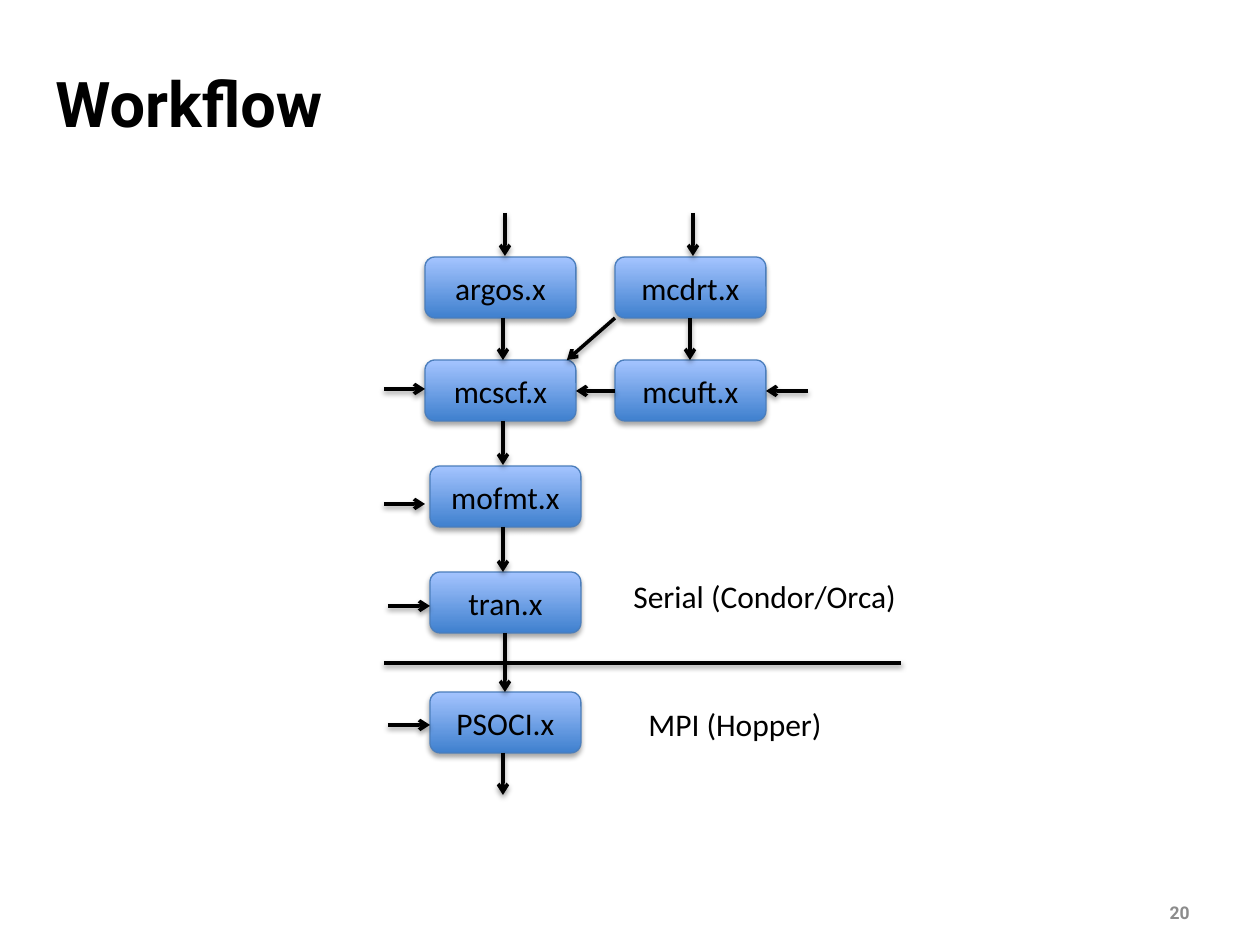
from typing import NamedTuple

import pptx
import pptx.dml.color
import pptx.enum.shapes
import pptx.enum.text
import pptx.oxml.ns
import pptx.util
from lxml import etree

PX = 914400 // 126
COLORS = {
    "text": "000000",
    "page": "8C8C8C",
    "box_bottom": "3F80CE",
    "box_top": "A4C4FF",
    "box_edge": "4B7EBC",
    "flow": "000000",
    "shadow": "000000",
}
BOX_W, BOX_H = 151, 61
LEFT, LEFT_LOWER, RIGHT = 425, 430, 615
INPUT_ROW, SCF_ROW, FORMAT_ROW, TRAN_ROW, CI_ROW = 257, 360, 466, 572, 692
LEFT_FLOW, LEFT_FLOW_OUTER = 503, 505
ALIGN = pptx.enum.text.PP_ALIGN
ANCHOR = pptx.enum.text.MSO_ANCHOR


class Program(NamedTuple):
    name: str
    left: int
    top: int


class Flow(NamedTuple):
    x1: int
    y1: int
    x2: int
    y2: int
    arrow: bool = True


class Label(NamedTuple):
    text: str
    left: int
    top: int
    width: int
    height: int


PROGRAMS = [
    Program("mcdrt.x", RIGHT, INPUT_ROW),
    Program("mofmt.x", LEFT_LOWER, FORMAT_ROW),
    Program("mcuft.x", RIGHT, SCF_ROW),
    Program("argos.x", LEFT, INPUT_ROW),
    Program("mcscf.x", LEFT, SCF_ROW),
    Program("tran.x", LEFT_LOWER, TRAN_ROW),
    Program("PSOCI.x", LEFT_LOWER, CI_ROW),
]
FLOWS = [
    # between programs
    Flow(690, INPUT_ROW + BOX_H, 690, SCF_ROW),
    Flow(RIGHT, INPUT_ROW + BOX_H, 567, SCF_ROW),
    Flow(RIGHT, 391, LEFT + BOX_W, 391),
    Flow(LEFT_FLOW_OUTER, TRAN_ROW + BOX_H, LEFT_FLOW_OUTER, CI_ROW),
    Flow(LEFT_FLOW, FORMAT_ROW + BOX_H, LEFT_FLOW, TRAN_ROW),
    Flow(LEFT_FLOW, SCF_ROW + BOX_H, LEFT_FLOW, FORMAT_ROW - 1),
    Flow(LEFT_FLOW, INPUT_ROW + BOX_H, LEFT_FLOW, SCF_ROW),
    # outside inputs and the final output
    Flow(LEFT_FLOW_OUTER, 213, LEFT_FLOW_OUTER, INPUT_ROW - 1),
    Flow(693, 213, 693, INPUT_ROW - 1),
    Flow(384, 389, LEFT, 389),
    Flow(384, 504, LEFT, 504),
    Flow(388, 606, LEFT_LOWER, 606),
    Flow(388, 725, LEFT_LOWER, 725),
    Flow(808, 391, RIGHT + BOX_W, 391),
    Flow(LEFT_FLOW, CI_ROW + BOX_H, LEFT_FLOW, 795),
    # boundary between serial and parallel stages
    Flow(384, 663, 901, 663, arrow=False),
]
TITLE = Label("Workflow", 43, 23, 1160, 158)
PAGE_NUMBER = Label("20", 1143, 888, 59, 50)
STAGES = [
    Label("MPI (Hopper)", 636, 699, 200, 50),
    Label("Serial (Condor/Orca)", 621, 571, 291, 50),
]


def px(*lengths: int) -> list[int]:
    return [length * PX for length in lengths]


def rgb(name: str) -> pptx.dml.color.RGBColor:
    return pptx.dml.color.RGBColor.from_string(COLORS[name])


def write(frame, text: str, *, size=18, font="Calibri", color="text", bold=False,
          align=ALIGN.LEFT, anchor=ANCHOR.TOP, wrap=True) -> None:
    frame.word_wrap = wrap
    frame.vertical_anchor = anchor
    paragraph = frame.paragraphs[0]
    paragraph.alignment = align
    run = paragraph.add_run()
    run.text = text
    run.font.size = pptx.util.Pt(size)
    run.font.name = font
    run.font.bold = bold
    run.font.color.rgb = rgb(color)


def add_shadow(shape, distance: float, opacity: int) -> None:
    """Cast a soft shadow straight down; call once fill and line are set."""
    qn = pptx.oxml.ns.qn
    effects = etree.SubElement(shape.element.spPr, qn("a:effectLst"))
    shadow = etree.SubElement(
        effects, qn("a:outerShdw"), blurRad=str(pptx.util.Pt(3.1)),
        dist=str(pptx.util.Pt(distance)), dir="5400000", rotWithShape="0")
    color = etree.SubElement(shadow, qn("a:srgbClr"), val=COLORS["shadow"])
    etree.SubElement(color, qn("a:alpha"), val=str(opacity * 1000))


def draw_program(slide, program: Program) -> None:
    box = slide.shapes.add_shape(
        pptx.enum.shapes.MSO_SHAPE.ROUNDED_RECTANGLE,
        *px(program.left, program.top, BOX_W, BOX_H))
    box.fill.gradient()
    box.fill.gradient_angle = 90
    for stop, position, color in zip(box.fill.gradient_stops, (0, 1),
                                     ("box_bottom", "box_top")):
        stop.position = position
        stop.color.rgb = rgb(color)
    box.line.color.rgb = rgb("box_edge")
    box.line.width = pptx.util.Pt(0.75)
    add_shadow(box, distance=1.8, opacity=35)
    write(box.text_frame, program.name, align=ALIGN.CENTER, anchor=ANCHOR.MIDDLE)


def draw_flow(slide, flow: Flow) -> None:
    line = slide.shapes.add_connector(
        pptx.enum.shapes.MSO_CONNECTOR.STRAIGHT,
        *px(flow.x1, flow.y1, flow.x2, flow.y2))
    line.line.color.rgb = rgb("flow")
    line.line.width = pptx.util.Pt(2)
    if flow.arrow:
        etree.SubElement(line.line._get_or_add_ln(),
                         pptx.oxml.ns.qn("a:tailEnd"), type="arrow")
    add_shadow(line, distance=1.6, opacity=38)


def draw_label(slide, label: Label, **text_format) -> None:
    box = slide.shapes.add_textbox(
        *px(label.left, label.top, label.width, label.height))
    write(box.text_frame, label.text, **text_format)


def main() -> None:
    deck = pptx.Presentation()
    deck.slide_width, deck.slide_height = px(1260, 945)
    slide = deck.slides.add_slide(deck.slide_layouts[6])
    draw_label(slide, TITLE, size=36, font="Roboto", bold=True, anchor=ANCHOR.MIDDLE)
    draw_label(slide, PAGE_NUMBER, size=10, font="Roboto", color="page", bold=True,
               align=ALIGN.RIGHT, anchor=ANCHOR.MIDDLE)
    for program in PROGRAMS:
        draw_program(slide, program)
    for flow in FLOWS:
        draw_flow(slide, flow)
    for stage in STAGES:
        draw_label(slide, stage, wrap=False)
    deck.save("out.pptx")


if __name__ == "__main__":
    main()
